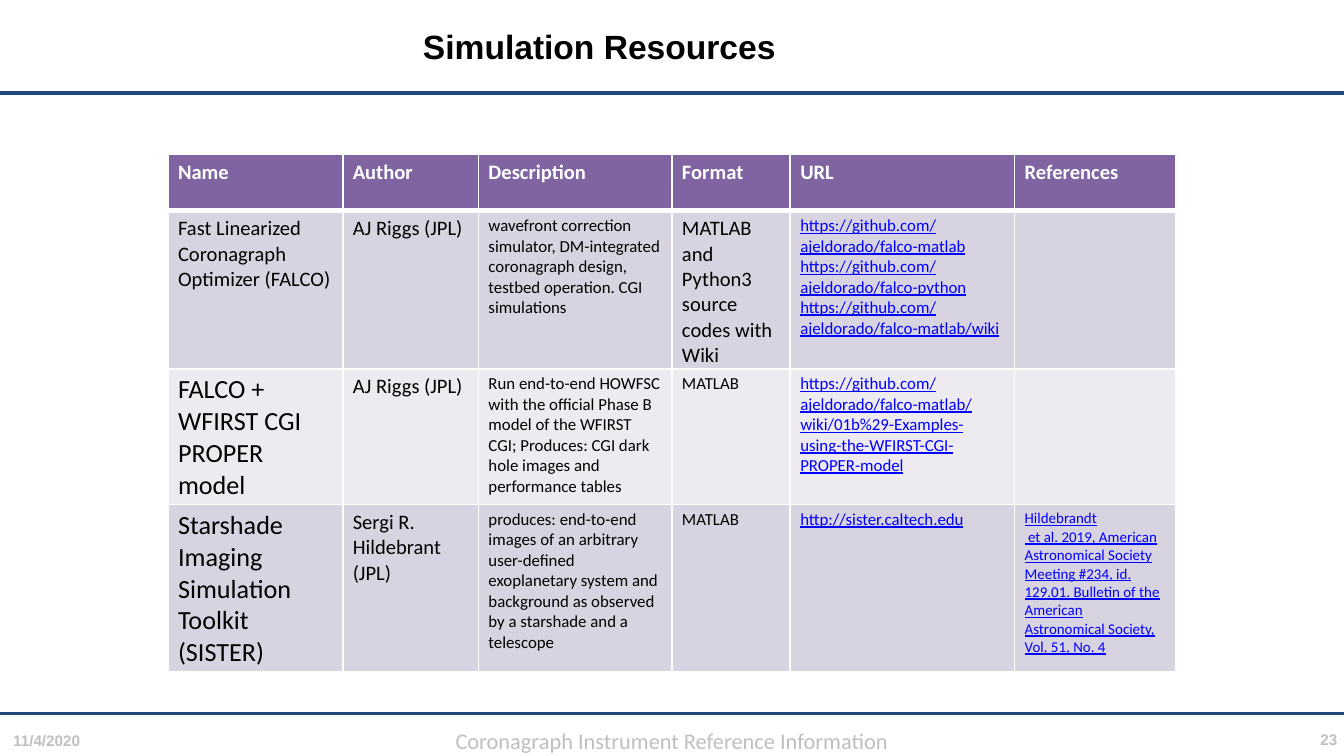
from dataclasses import dataclass

from lxml import etree
from pptx import Presentation
from pptx import util as u
from pptx.dml.color import RGBColor
from pptx.enum import shapes, text
from pptx.oxml.ns import qn


@dataclass(frozen=True)
class Theme:
    rule: str = "1F497D"
    foot: str = "BFBFBF"
    ink: str = "000000"
    link: str = "0000FF"
    white: str = "FFFFFF"
    head: str = "8064A2"
    bands: tuple = ("D8D3E0", "EDEAF0")
    sans: str = "Arial"
    body: str = "Calibri"
    title: float = 18
    large: float = 14
    mid: float = 11
    small: float = 9
    tiny: float = 8
    note: float = 12
    mark: float = 8.2


T = Theme()
LEFT, MID, RIGHT = text.PP_ALIGN.LEFT, text.PP_ALIGN.CENTER, text.PP_ALIGN.RIGHT
WIDE = 10
TALL = WIDE * 9 / 16
PAD = 0.15 / 2
COLS = (1.3, 1.01, 1.44, 0.88, 1.67, 1.2)
ROWS = (0.42, 1.12, 0.97, 1.2)
HEADS = ("Name", "Author", "Description", "Format", "URL", "References")
LINK_COL = HEADS.index("URL")

# Each cell holds its type size, then one string per paragraph.
TOOLS = (
    (
        (T.mid, "Fast Linearized Coronagraph Optimizer (FALCO)"),
        (T.mid, "AJ Riggs (JPL)"),
        (T.small, "wavefront correction simulator, DM-integrated coronagraph "
                  "design, testbed operation. CGI simulations"),
        (T.mid, "MATLAB and Python3 source codes with Wiki"),
        (T.small, "https://github.com/ajeldorado/falco-matlab",
         "https://github.com/ajeldorado/falco-python",
         "https://github.com/ajeldorado/falco-matlab/wiki"),
        (T.small,),
    ),
    (
        (T.large, "FALCO + WFIRST CGI PROPER model"),
        (T.mid, "AJ Riggs (JPL)"),
        (T.small, "Run end-to-end HOWFSC with the official Phase B model of the "
                  "WFIRST CGI; Produces: CGI dark hole images and performance tables"),
        (T.small, "MATLAB"),
        (T.small, "https://github.com/ajeldorado/falco-matlab/wiki/"
                  "01b%29-Examples-using-the-WFIRST-CGI-PROPER-model"),
        (T.small,),
    ),
    (
        (T.large, "Starshade Imaging Simulation Toolkit (SISTER)"),
        (T.mid, "Sergi R. Hildebrant (JPL)"),
        (T.small, "produces: end-to-end images of an arbitrary user-defined "
                  "exoplanetary system and background as observed by a starshade "
                  "and a telescope"),
        (T.small, "MATLAB"),
        (T.small, "http://sister.caltech.edu"),
        (T.tiny, "Hildebrandt",
         " et al. 2019, American Astronomical Society Meeting #234, id. 129.01. "
         "Bulletin of the American Astronomical Society, Vol. 51, No. 4"),
    ),
)


def add_run(para, words, size, color, face=T.body, bold=False, under=False):
    run = para.add_run()
    run.text = words
    font = run.font
    font.size, font.name = u.Pt(size), face
    font.bold, font.underline = bold, under
    font.color.rgb = RGBColor.from_string(color)


def add_label(slide, words, box, size, color, align=LEFT, face=T.sans,
              bold=True, pad=(0.1, 0.05), anchor=text.MSO_ANCHOR.TOP):
    frame = slide.shapes.add_textbox(*map(u.Inches, box)).text_frame
    frame.word_wrap = True
    frame.vertical_anchor = anchor
    frame.margin_left = frame.margin_right = u.Inches(pad[0])
    frame.margin_top = frame.margin_bottom = u.Inches(pad[1])
    para = frame.paragraphs[0]
    para.alignment = align
    add_run(para, words, size, color, face, bold)


def add_rule(slide, y):
    line = slide.shapes.add_connector(
        shapes.MSO_CONNECTOR.STRAIGHT,
        u.Inches(0), u.Inches(y), u.Inches(WIDE), u.Inches(y))
    line.line.color.rgb = RGBColor.from_string(T.rule)
    line.line.width = u.Pt(2)
    etree.SubElement(line._element.spPr, qn("a:effectLst"))


def add_edges(cell, top, base):
    """Draw white borders with the given top and bottom widths in points."""
    props = cell._tc.get_or_add_tcPr()
    for side, width in (("L", 1), ("R", 1), ("T", top), ("B", base)):
        edge = etree.SubElement(props, qn("a:ln" + side), w=str(u.Pt(width)))
        fill = etree.SubElement(edge, qn("a:solidFill"))
        etree.SubElement(fill, qn("a:srgbClr"), val=T.white)


def fill_cell(cell, size, lines, color, back, edges, bold=False, under=False):
    add_edges(cell, *edges)
    cell.fill.solid()
    cell.fill.fore_color.rgb = RGBColor.from_string(back)
    cell.margin_left = cell.margin_right = u.Inches(PAD)
    cell.margin_top = cell.margin_bottom = u.Inches(PAD / 2)
    frame = cell.text_frame
    for i, words in enumerate(lines):
        para = frame.add_paragraph() if i else frame.paragraphs[0]
        add_run(para, words, size, color, bold=bold, under=under)
    if not lines:
        frame.paragraphs[0].font.size = u.Pt(size)


def add_grid(slide):
    box = map(u.Inches, (1.25, 1.15, sum(COLS), sum(ROWS)))
    holder = slide.shapes.add_table(len(ROWS), len(COLS), *box)
    grid = holder.table
    for col, width in zip(grid.columns, COLS):
        col.width = u.Inches(width)
    for row, height in zip(grid.rows, ROWS):
        row.height = u.Inches(height)
    holder.height = u.Inches(3.84)
    for c, name in enumerate(HEADS):
        fill_cell(grid.cell(0, c), T.mid, [name], T.white, T.head, (1, 3), bold=True)
    for r, tool in enumerate(TOOLS):
        edges = (1 if r else 3, 1)
        for c, (size, *lines) in enumerate(tool):
            link = c >= LINK_COL
            fill_cell(grid.cell(r + 1, c), size, lines, T.link if link else T.ink,
                      T.bands[r % 2], edges, under=link)


def main():
    deck = Presentation()
    deck.slide_width, deck.slide_height = u.Inches(WIDE), u.Inches(TALL)
    slide = deck.slides.add_slide(deck.slide_layouts[6])
    add_label(slide, "23", (9.04, 5.4, 0.96, 0.19), T.mark, T.foot, RIGHT,
              pad=(0.05, 0.03))
    add_label(slide, "11/4/2020", (0, 5.39, 2.09, 0.24), T.mark, T.foot)
    for y in (5.31, 0.69):
        add_rule(slide, y)
    add_label(slide, "Coronagraph Instrument Reference Information",
              (0, 5.36, WIDE, 0.3), T.note, T.foot, MID, T.body, bold=False)
    add_label(slide, "Simulation Resources", (1.5, 0.06, 5.92, 0.56), T.title,
              T.ink, MID, anchor=text.MSO_ANCHOR.MIDDLE)
    add_grid(slide)
    deck.save("out.pptx")


if __name__ == "__main__":
    main()
